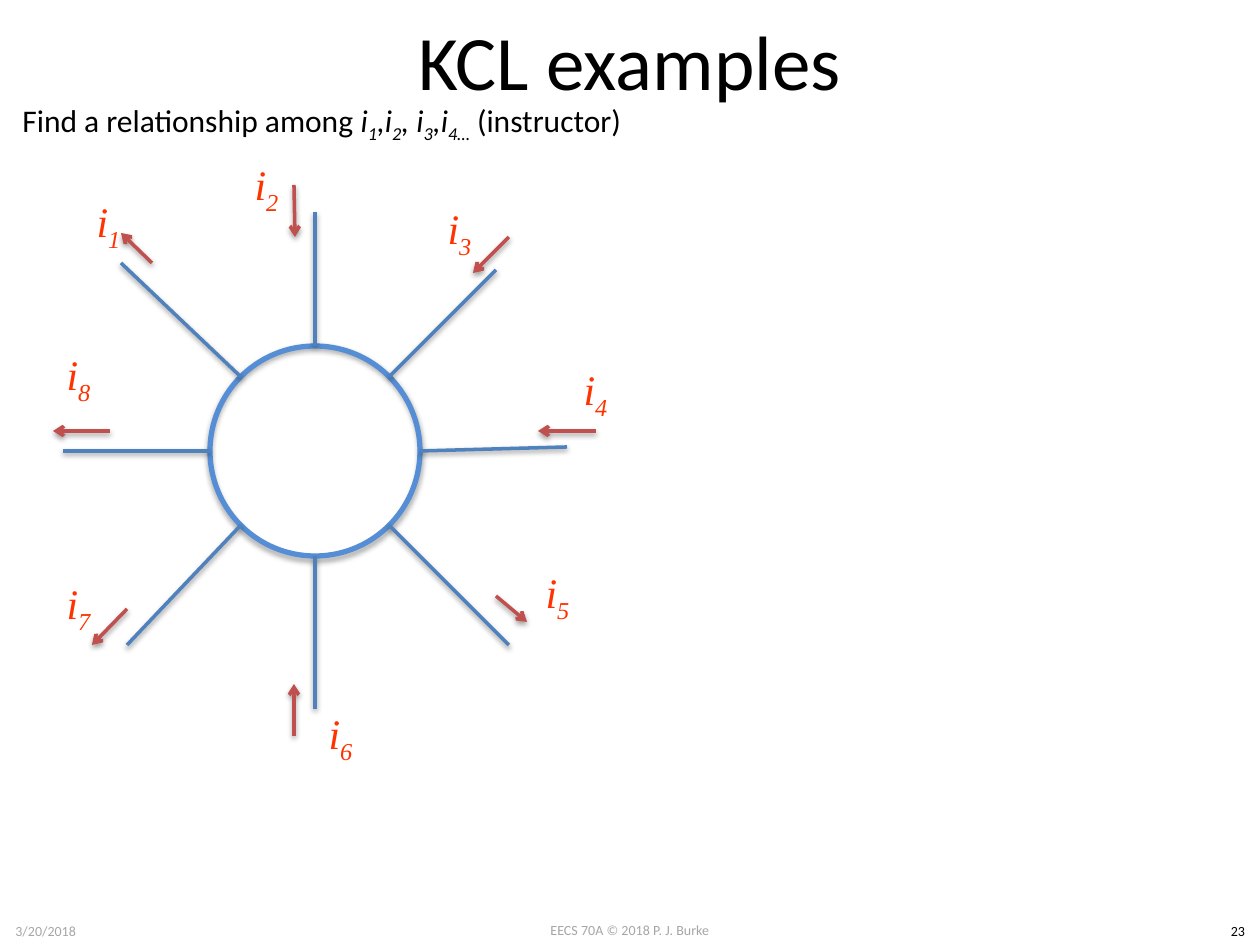
import math

from lxml import etree
from pptx import Presentation
from pptx import util as u
from pptx.dml.color import RGBColor
from pptx.enum import shapes, text
from pptx.oxml import ns

PX = 914400 / 126
BLACK = RGBColor(0x00, 0x00, 0x00)
GREY = RGBColor(0xA6, 0xA6, 0xA6)
ORANGE = RGBColor(0xFF, 0x33, 0x00)
RED = RGBColor(0xC0, 0x50, 0x4D)
BLUE = RGBColor(0x4F, 0x81, 0xBD)
RING_BLUE = RGBColor(0x55, 0x8E, 0xD5)
TOP, MIDDLE = text.MSO_ANCHOR.TOP, text.MSO_ANCHOR.MIDDLE
LEFT, CENTER = text.PP_ALIGN.LEFT, text.PP_ALIGN.CENTER

deck = Presentation()
deck.slide_width, deck.slide_height = u.Emu(int(1260 * PX)), u.Emu(int(945 * PX))
slide = deck.slides.add_slide(deck.slide_layouts[6])


def write(box, pieces, size, color, align=CENTER, anchor=MIDDLE, face="Calibri", wrap=True):
    """Add a text box; pieces are (wording, italic, subscript) tuples."""
    words = slide.shapes.add_textbox(*(u.Emu(round(n * PX)) for n in box))
    frame = words.text_frame
    frame.word_wrap, frame.vertical_anchor = wrap, anchor
    line = frame.paragraphs[0]
    line.alignment = align
    for wording, italic, subscript in pieces:
        run = line.add_run()
        run.text = wording
        run.font.color.rgb = color
        look = {"size": u.Pt(size), "name": face, "italic": italic}
        for key, value in look.items():
            setattr(run.font, key, value)
        if subscript:
            run.font._element.set("baseline", "-25000")


def outline(part, color, width, opacity, distance, arrow=False):
    """Give a line or ring its stroke, arrowhead and soft shadow."""
    part.line.color.rgb = color
    part.line.width = u.Pt(width)
    if arrow:
        stroke = part.line._get_or_add_ln()
        etree.SubElement(stroke, ns.qn("a:tailEnd"), type="arrow")
    effects = etree.SubElement(part._element.spPr, ns.qn("a:effectLst"))
    shadow = etree.SubElement(effects, ns.qn("a:outerShdw"), blurRad="40000",
                              dist=str(distance), dir="5400000", rotWithShape="0")
    tint = etree.SubElement(shadow, ns.qn("a:srgbClr"), val="000000")
    etree.SubElement(tint, ns.qn("a:alpha"), val=str(opacity * 1000))


write((63, 0, 1134, 120), [("KCL examples", False, False)], 44, BLACK)

task = [("Find a relationship among ", False, False)]
for wording, index in (("i", "1"), (",i", "2"), (", i", "3"), (",i", "4…")):
    task += [(wording, True, False), (index, True, True)]
task.append((" (instructor)", False, False))
write((10, 95, 645, 50), task, 18, BLACK, LEFT, TOP, wrap=False)

hub_x, hub_y, radius = 315, 451, 105
hub_box = (hub_x - radius, hub_y - radius, 2 * radius, 2 * radius)
hub = slide.shapes.add_shape(shapes.MSO_SHAPE.OVAL, *(u.Emu(round(n * PX)) for n in hub_box))
hub.fill.background()
outline(hub, RING_BLUE, 3, 35, 23000)

# Clockwise from the upper left: wire end, arrow start, arrow end, label corner
branches = [
    ((121, 263), (152, 263), (121, 233), (60, 186)),
    ((315, 212), (294, 185), (295, 237), (218, 149)),
    ((496, 270), (509, 237), (473, 273), (411, 193)),
    ((567, 447), (596, 431), (538, 431), (547, 354)),
    ((509, 645), (496, 596), (527, 622), (509, 557)),
    ((315, 709), (294, 736), (294, 684), (292, 698)),
    ((127, 645), (127, 609), (92, 645), (30, 568)),
    ((63, 451), (110, 431), (53, 431), (30, 339)),
]
for number, (wire_end, tail, tip, corner) in enumerate(branches, 1):
    angle = math.radians(180 + 45 * number)
    joint = (round(hub_x + radius * math.cos(angle)), round(hub_y + radius * math.sin(angle)))
    for start, end, color in ((joint, wire_end, BLUE), (tail, tip, RED)):
        wire = slide.shapes.add_connector(
            shapes.MSO_CONNECTOR.STRAIGHT, *(u.Emu(round(n * PX)) for n in start + end))
        outline(wire, color, 2, 38, 20000, arrow=color == RED)
    write((*corner, 97, 77), [("i", True, False), (str(number), True, True)],
          24, ORANGE, face="Times New Roman")

write((3, 916, 261, 29), [("3/20/2018", False, False)], 8, GREY, LEFT)
write((483, 915, 294, 30), [("EECS 70A © 2018 P. J. Burke", False, False)], 8, GREY, anchor=TOP)
write((1216, 916, 44, 30), [("23", False, False)], 8, BLACK, anchor=TOP)

deck.save("out.pptx")
